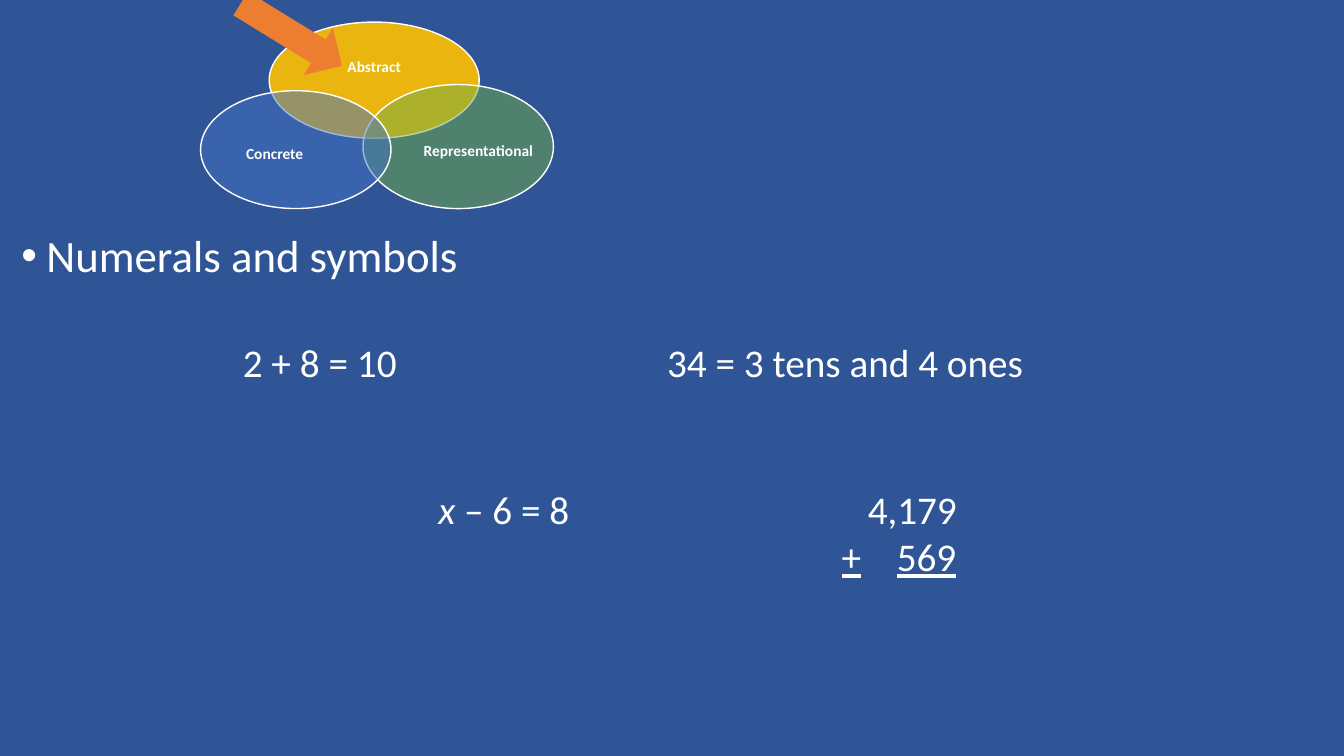
from lxml import etree
from pptx import Presentation
from pptx.dml.color import RGBColor
from pptx.enum.shapes import MSO_SHAPE
from pptx.enum.text import MSO_ANCHOR, MSO_AUTO_SIZE, PP_ALIGN
from pptx.oxml.ns import qn
from pptx.util import Pt

OVAL, ARROW = MSO_SHAPE.OVAL, MSO_SHAPE.RIGHT_ARROW
MIDDLE, TOP = MSO_ANCHOR.MIDDLE, MSO_ANCHOR.TOP
GROW = MSO_AUTO_SIZE.SHAPE_TO_FIT_TEXT
LEFT, CENTER, RIGHT = PP_ALIGN.LEFT, PP_ALIGN.CENTER, PP_ALIGN.RIGHT
FONT = "Calibri"
COLORS = {
    "background": "2F5597",
    "text": "FFFFFF",
    "abstract": "FFC000",
    "representational": "70AD47",
    "concrete": "4472C4",
    "arrow": "ED7D31",
}
STAGES = [
    ("Abstract", "abstract", 90, (49, 0, 150, 83), (69, 14.4, 110, 36.7)),
    ("Representational", "representational", 50, (116, 44.6, 136, 88.6), (157.7, 67.7, 81.4, 49)),
    ("Concrete", "concrete", 50, (0, 49, 136, 84.2), (12.2, 71.3, 81.4, 46)),
]


def color(name):
    return RGBColor.from_string(COLORS[name])


def place(origin, box):
    left, top, width, height = box
    return Pt(origin[0] + left), Pt(origin[1] + top), Pt(width), Pt(height)


def style(paragraph, size, bold=None):
    font = paragraph.font
    font.name, font.size, font.bold = FONT, Pt(size), bold
    font.color.rgb = color("text")


def add_stage(group, origin, name, fill, opacity, oval_box, label_box):
    oval = group.shapes.add_shape(OVAL, *place(origin, oval_box))
    oval.shadow.inherit = False
    oval.fill.solid()
    oval.fill.fore_color.rgb = color(fill)
    srgb = oval.fill._xPr.find(".//" + qn("a:srgbClr"))
    etree.SubElement(srgb, qn("a:alpha"), val=str(opacity * 1000))
    oval.line.color.rgb = color("text")
    oval.line.width = Pt(1)

    label = group.shapes.add_textbox(*place(origin, label_box)).text_frame
    label.word_wrap = True
    label.vertical_anchor = MIDDLE
    label.margin_left = label.margin_right = label.margin_top = label.margin_bottom = 0
    paragraph = label.paragraphs[0]
    paragraph.text = name
    paragraph.alignment = CENTER
    paragraph.line_spacing = 0.9
    style(paragraph, 11, True)


def add_venn(slide, left, top):
    origin = (left, top)
    group = slide.shapes.add_group_shape()
    for stage in STAGES:
        add_stage(group, origin, *stage)
    pointer = slide.shapes.add_shape(ARROW, *place(origin, (22.3, -10.8, 85, 39.6)))
    pointer.shadow.inherit = False
    pointer.rotation = 31.6
    pointer.fill.solid()
    pointer.fill.fore_color.rgb = color("arrow")
    pointer.line.fill.background()


def fill_heading(heading, left, top, width, height):
    heading.left, heading.top, heading.width, heading.height = place((left, top), (0, 0, width, height))
    heading.text_frame.vertical_anchor = TOP
    paragraph = heading.text_frame.paragraphs[0]
    paragraph.text = "Numerals and symbols"
    paragraph.line_spacing = 0.9
    paragraph.space_before = Pt(0)
    properties = paragraph._p.get_or_add_pPr()
    properties.set("marL", str(Pt(18)))
    properties.set("indent", str(Pt(-18)))
    etree.SubElement(properties, qn("a:buFont"), typeface="Arial")
    etree.SubElement(properties, qn("a:buChar"), char="•")
    style(paragraph, 32)


def add_equation(slide, left, top, width, text, variable=""):
    frame = slide.shapes.add_textbox(*place((left, top), (0, 0, width, 41))).text_frame
    frame.word_wrap = True
    frame.auto_size = GROW
    paragraph = frame.paragraphs[0]
    if variable:
        run = paragraph.add_run()
        run.text = variable
        run.font.italic = True
    paragraph.add_run().text = text
    style(paragraph, 28)


def add_column_sum(slide, left, top, width, height):
    frame = slide.shapes.add_textbox(*place((left, top), (0, 0, width, height))).text_frame
    frame.word_wrap = True
    frame.margin_left = Pt(62.6)
    first = frame.paragraphs[0]
    first.text = "4,179"
    first.alignment = RIGHT
    style(first, 28)
    second = frame.add_paragraph()
    second.text = "+\t569"
    second.alignment = LEFT
    stops = etree.SubElement(second._p.get_or_add_pPr(), qn("a:tabLst"))
    etree.SubElement(stops, qn("a:tab"), pos=str(Pt(39.4)), algn="l")
    style(second, 28)
    second.font.underline = True
    second.runs[0].font.underline = True


def build_slide(deck):
    slide = deck.slides.add_slide(deck.slide_layouts[1])
    title = slide.shapes.title
    title._element.getparent().remove(title._element)
    slide.background.fill.solid()
    slide.background.fill.fore_color.rgb = color("background")
    fill_heading(slide.placeholders[1], 8, 163.4, 684, 305)
    add_venn(slide, 143.3, 15.8)
    add_equation(slide, 166.4, 238.3, 177, "2 + 8 = 10")
    add_equation(slide, 306, 343.4, 177, "– 6 = 8", "x ")
    add_equation(slide, 469.4, 238.3, 370, "34 = 3 tens and 4 ones")
    add_column_sum(slide, 538.6, 343.4, 152, 109)


def main():
    deck = Presentation()
    deck.slide_width, deck.slide_height = Pt(960), Pt(540)
    build_slide(deck)
    deck.save("out.pptx")


if __name__ == "__main__":
    main()
